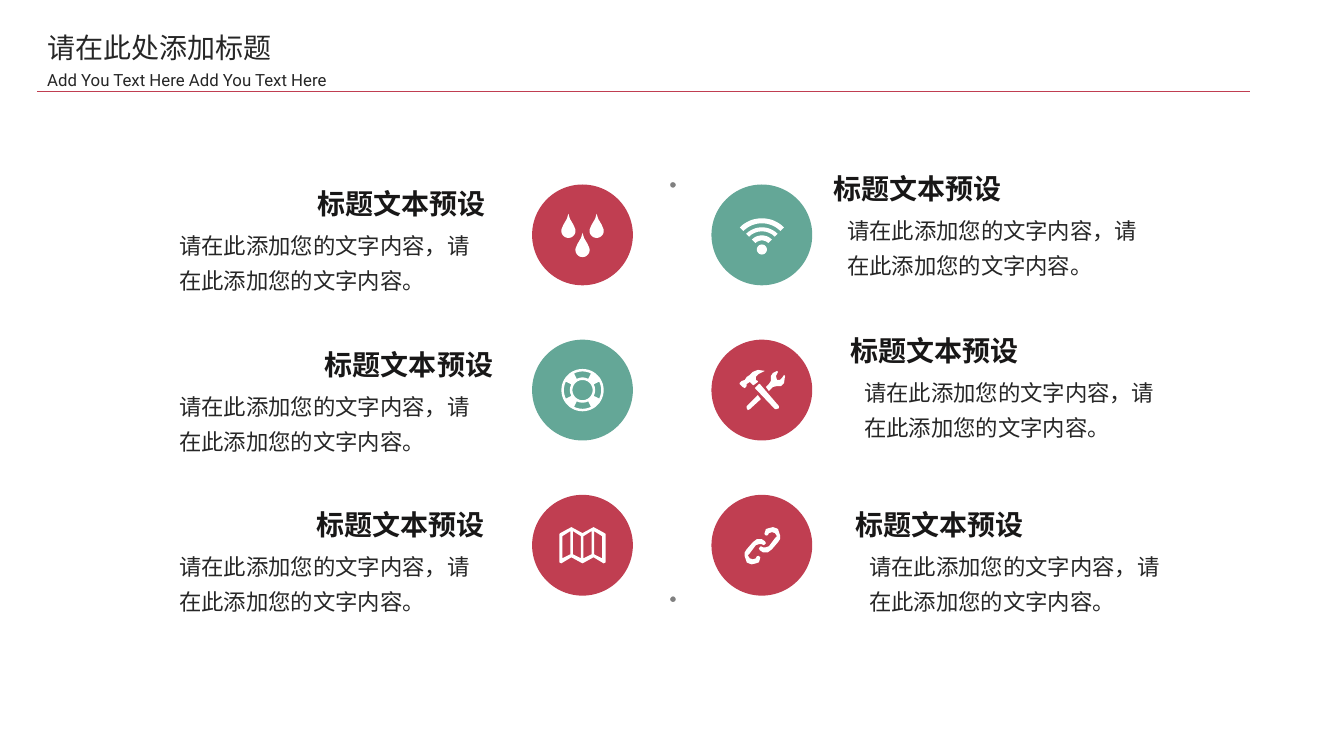
import math

import pptx
import pptx.dml.color
import pptx.enum.shapes
import pptx.enum.text
import pptx.oxml.ns
import pptx.util
from lxml import etree

Cm = pptx.util.Cm
Pt = pptx.util.Pt
RGBColor = pptx.dml.color.RGBColor
ALIGN = pptx.enum.text.PP_ALIGN
OVAL = pptx.enum.shapes.MSO_SHAPE.OVAL

RED = RGBColor(0xC0, 0x3E, 0x51)
GREEN = RGBColor(0x64, 0xA7, 0x97)
GREY = RGBColor(0x80, 0x80, 0x80)
WHITE = RGBColor(0xFF, 0xFF, 0xFF)
TEXT = RGBColor(0x26, 0x26, 0x26)
HEADING = RGBColor(0x18, 0x17, 0x17)

FONT = "Roboto"
HEADING_TEXT = "标题文本预设"
BODY_TEXT = "请在此添加您的文字内容，请在此添加您的文字内容。"

# Icon points are hundredths of a circle's diameter, measured from its centre
DIAMETER = 2.54
FINENESS = 10
ICON_SCALE = Cm(DIAMETER) / (100 * FINENESS)

# Circle grid and text blocks, in centimetres
COLUMN_X = (14.68, 19.2)
FIRST_ROW_Y = 5.92
ROW_PITCH = 3.91
HEADING_AREA = (6.86, 1.12)
BODY_AREA = (7.8, 1.78)
BODY_DROP = 1.07
LEFT_BODY_X = 4.52
RIGHT_BODY_INDENT = 0.6
LEFT_HEADINGS = ((5.64, 4.57), (5.82, 8.64), (5.61, 12.67))
RIGHT_HEADINGS = ((20.75, 4.19), (21.18, 8.28), (21.31, 12.67))


# Icon outlines
def arc(x, y, radius, start, end, steps=24):
    angles = [math.radians(start + (end - start) * i / steps) for i in range(steps + 1)]
    return [(x + radius * math.cos(a), y + radius * math.sin(a)) for a in angles]


def band(y, outer, inner, middle, half):
    return (arc(0, y, outer, middle - half, middle + half)
            + arc(0, y, inner, middle + half, middle - half))


def drops():
    def drop(x, y):
        return ([(x, y), (x + 1.5, y + 5), (x + 5, y + 11)]
                + arc(x, y + 17, 7, -15, 195)
                + [(x - 5, y + 11), (x - 1.5, y + 5)])
    return [drop(-14, -21), drop(14, -21), drop(0, -2)]


def wifi():
    radii = ((31, 26), (22, 18), (14, 9))
    return [arc(0, 14.5, 5, 0, 360)] + [band(14.5, *pair, -90, 45) for pair in radii]


def lifebuoy():
    rings = [arc(0, 0, radius, 0, 360, 48) for radius in (21, 10)]
    return rings + [band(0, 18.5, 12.5, angle, 27) for angle in range(0, 360, 90)]


def folded_map():
    outline = [(-23, -11), (-22, -12), (-11, -18), (0, -12), (11, -18), (22, -12),
               (23, -11), (23, 17), (21, 18), (11, 12), (0, 18), (-11, 12),
               (-21, 18), (-23, 17)]
    contours = [outline]
    for index in range(4):
        left = -20 + 10.5 * index
        low, high = (left, left + 8) if index % 2 == 0 else (left + 8, left)
        contours.append([(low, -9), (high, -14), (high, 9), (low, 13)])
    return contours


def tools():
    hammer_head = [(-15, -6), (-12, -8), (-9, -5), (-8, -5), (-4, -8), (-4, -9), (-6, -10),
                   (-6, -13), (-3, -16), (3, -19), (-4, -20), (-9, -18), (-12, -15),
                   (-15, -13), (-17, -10), (-20, -9), (-22, -7), (-22, -6), (-19, -3),
                   (-17, -2), (-15, -4)]
    hammer_handle = [(-2, -6), (-3, -6), (-7, -2), (13, 19), (14, 19), (17, 18), (17, 16)]
    wrench = [(23, -14), (22, -15), (20, -12), (18, -10), (15, -10), (14, -14), (16, -18),
              (15, -19), (11, -17), (9, -14), (9, -9), (7, -6), (4, -3), (7, 1),
              (11, -3), (15, -4), (19, -4), (22, -7)]
    wrench_handle = [(-15, 16), (-15, 18), (-14, 20), (-12, 19), (-1, 9), (-4, 5)]
    return [hammer_head, hammer_handle, wrench, wrench_handle]


def chain():
    link = [(-5, 11), (-6, 13), (-9, 14), (-12, 13), (-14, 10), (-12, 8), (-6, 0),
            (-3, -1), (0, -1), (2, 0), (3, -1), (4, -2), (3, -4), (0, -6), (-5, -6),
            (-9, -3), (-15, 4), (-17, 7), (-17, 11), (-15, 17), (-13, 18), (-10, 19),
            (-6, 18), (-3, 17), (-2, 14), (-1.5, 12), (-3, 10.5)]
    return [link, [(1 - x, 1 - y) for x, y in link]]


# Element builders
def paint(shape, fill, line=None):
    shape.shadow.inherit = False
    shape.fill.solid()
    shape.fill.fore_color.rgb = fill
    if line is None:
        shape.line.fill.background()
    else:
        shape.line.color.rgb = line
        shape.line.width = Pt(1)


def add_circle(page, x, y, diameter, fill, line=None):
    corner = (Cm(x - diameter / 2), Cm(y - diameter / 2))
    circle = page.shapes.add_shape(OVAL, *corner, Cm(diameter), Cm(diameter))
    paint(circle, fill, line)


def add_icon(page, x, y, contours):
    fine = [[(px * FINENESS, py * FINENESS) for px, py in contour] for contour in contours]
    builder = page.shapes.build_freeform(*fine[0][0], scale=ICON_SCALE)
    builder.add_line_segments(fine[0][1:], close=True)
    for contour in fine[1:]:
        builder.move_to(*contour[0])
        builder.add_line_segments(contour[1:], close=True)
    paint(builder.convert_to_shape(Cm(x), Cm(y)), WHITE)


def write(box, text, size, color, bold=False, align=ALIGN.LEFT, spacing=1.0, inset=True):
    frame = box.text_frame
    frame.word_wrap = True
    frame.auto_size = pptx.enum.text.MSO_AUTO_SIZE.NONE
    frame.vertical_anchor = pptx.enum.text.MSO_ANCHOR.TOP
    if not inset:
        for side in ("left", "top", "right", "bottom"):
            setattr(frame, f"margin_{side}", Cm(0))
    para = frame.paragraphs[0]
    para.alignment = align
    para.line_spacing = spacing
    span = para.add_run()
    span.text = text
    for name, value in {"name": FONT, "size": Pt(size), "bold": bold}.items():
        setattr(span.font, name, value)
    span.font.color.rgb = color


def add_text(page, x, y, area, text, **style):
    box = page.shapes.add_textbox(Cm(x), Cm(y), *map(Cm, area))
    write(box, text, **style)


def add_block(page, x, y, body_x, align):
    add_text(page, body_x, y + BODY_DROP, BODY_AREA, BODY_TEXT,
             size=16, color=TEXT, spacing=1.3, inset=False)
    add_text(page, x, y, HEADING_AREA, HEADING_TEXT,
             size=20, color=HEADING, bold=True, align=align)


def add_rule(page, x1, x2, y):
    straight = pptx.enum.shapes.MSO_CONNECTOR.STRAIGHT
    rule = page.shapes.add_connector(straight, Cm(x1), Cm(y), Cm(x2), Cm(y))
    rule.line.color.rgb = RED
    rule.line.width = Pt(0.5)
    etree.SubElement(rule._element.spPr, pptx.oxml.ns.qn("a:effectLst"))


def add_header(page):
    title = page.shapes.title
    place = {"left": 0.94, "top": 0.64, "width": 6.99, "height": 1.12}
    for name, value in place.items():
        setattr(title, name, Cm(value))
    write(title, "请在此处添加标题", 20, TEXT)
    add_text(page, 0.94, 1.47, (8.48, 0.86), "Add You Text Here Add You Text Here",
             size=12, color=TEXT, spacing=1.3)
    add_rule(page, 0.94, 31.5, 2.29)


def main():
    deck = pptx.Presentation()
    deck.slide_width, deck.slide_height = Cm(33.87), Cm(19.05)
    page = deck.slides.add_slide(deck.slide_layouts[5])
    add_header(page)

    # Dots at the ends of the middle axis
    for y in (4.66, 15.1):
        add_circle(page, 16.96, y, 0.18, GREY, WHITE)

    # Icon circles, row by row
    rows = (((RED, drops), (GREEN, wifi)),
            ((GREEN, lifebuoy), (RED, tools)),
            ((RED, folded_map), (RED, chain)))
    for index, row in enumerate(rows):
        y = FIRST_ROW_Y + index * ROW_PITCH
        for x, (color, icon) in zip(COLUMN_X, row):
            add_circle(page, x, y, DIAMETER, color)
            add_icon(page, x, y, icon())

    # Text blocks on both sides
    for x, y in LEFT_HEADINGS:
        add_block(page, x, y, LEFT_BODY_X, ALIGN.RIGHT)
    for x, y in RIGHT_HEADINGS:
        add_block(page, x, y, x + RIGHT_BODY_INDENT, ALIGN.LEFT)

    deck.save("out.pptx")


if __name__ == "__main__":
    main()
